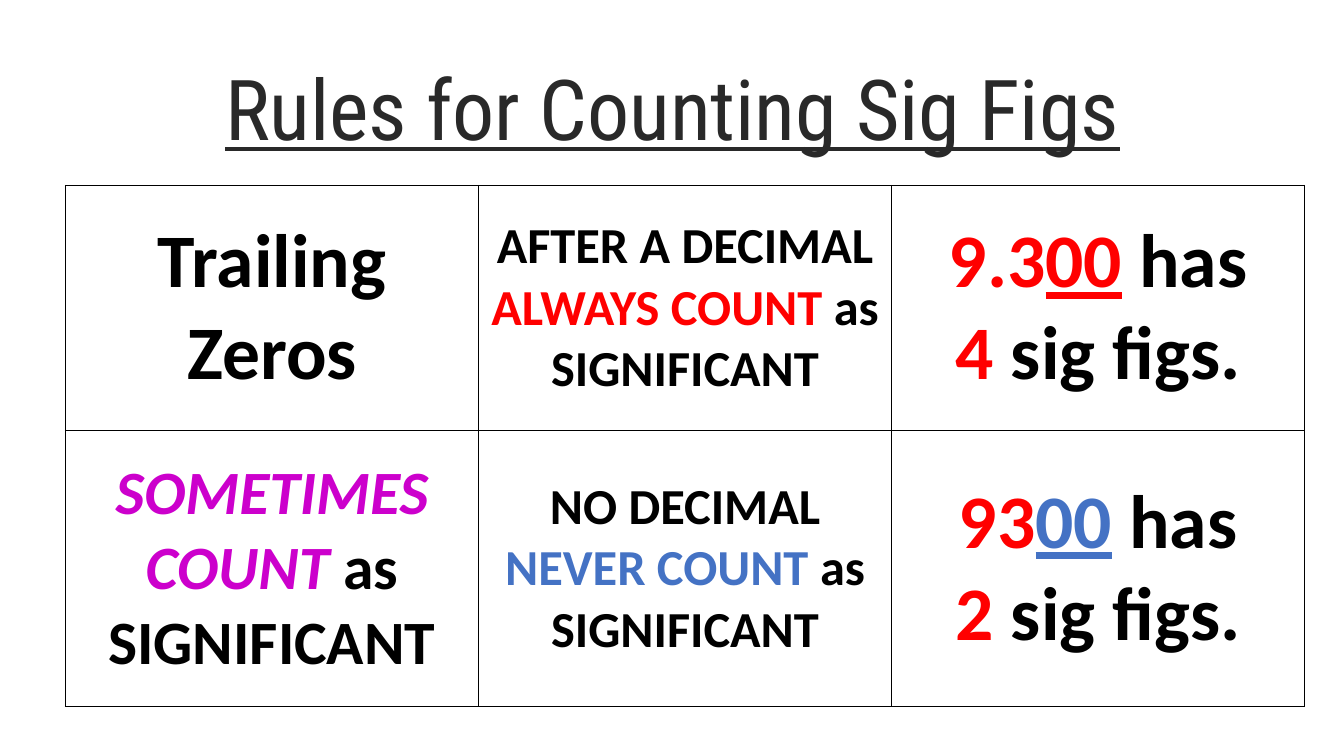
from dataclasses import dataclass

from lxml.etree import SubElement
from pptx import Presentation
from pptx.dml.color import RGBColor
from pptx.enum.text import MSO_ANCHOR as Anchor, PP_ALIGN as Align
from pptx.oxml.ns import qn
from pptx.util import Inches, Pt

WIDTH, HEIGHT = Inches(13.33), Inches(7.5)
COLORS = {
    "title": "292929",
    "black": "000000",
    "red": "FF0000",
    "blue": "4472C4",
    "purple": "CC00CC",
}


@dataclass(frozen=True)
class Piece:
    text: str
    color: str = "black"
    underline: bool = False
    italic: bool = False
    break_after: bool = False


@dataclass(frozen=True)
class Entry:
    size: int
    lines: tuple[tuple[Piece, ...], ...]


@dataclass(frozen=True)
class Area:
    left: float
    top: float
    width: float
    height: float

    def box(self) -> tuple[int, int, int, int]:
        return (
            round(self.left * WIDTH / 100),
            round(self.top * HEIGHT / 100),
            round(self.width * WIDTH / 100),
            round(self.height * HEIGHT / 100),
        )


def rule(condition: str, verdict: str, color: str) -> Entry:
    return Entry(36, ((Piece(condition, break_after=True),
                       Piece(f"{verdict} COUNT ", color),
                       Piece("as SIGNIFICANT")),))


def example(digits: str, zeros_color: str, count: str) -> Entry:
    return Entry(54, (
        (Piece(digits, "red"), Piece("00", zeros_color, underline=True), Piece(" has")),
        (Piece(f"{count} ", "red"), Piece("sig figs.")),
    ))


TITLE_AREA = Area(6.9, 5.33, 86.27, 19.33)
TABLE_AREA = Area(4.88, 24.53, 92.2, 68.93)
ROW_SHARES = (0.47, 0.53)
TITLE = Entry(60, ((Piece("Rules for Counting Sig Figs", "title", underline=True),),))
RULES = (
    (
        Entry(54, ((Piece("Trailing Zeros"),),)),
        rule("AFTER A DECIMAL", "ALWAYS", "red"),
        example("9.3", "red", "4"),
    ),
    (
        Entry(44, ((Piece("SOMETIMES COUNT ", "purple", italic=True),
                    Piece("as SIGNIFICANT")),)),
        rule("NO DECIMAL", "NEVER", "blue"),
        example("93", "blue", "2"),
    ),
)


def write(text_frame, entry: Entry, font_name: str, bold: bool, spacing: float) -> None:
    text_frame.word_wrap = True
    for index, line in enumerate(entry.lines):
        paragraph = text_frame.add_paragraph() if index else text_frame.paragraphs[0]
        paragraph.alignment = Align.CENTER
        paragraph.line_spacing = spacing
        for piece in line:
            run = paragraph.add_run()
            run.text = piece.text
            formats = {
                "name": font_name,
                "size": Pt(entry.size),
                "bold": bold,
                "italic": piece.italic,
                "underline": piece.underline,
            }
            for attribute, value in formats.items():
                setattr(run.font, attribute, value)
            run.font.color.rgb = RGBColor.from_string(COLORS[piece.color])
            if piece.break_after:
                paragraph.add_line_break()


def add_borders(cell) -> None:
    properties = cell._tc.get_or_add_tcPr()
    for position, side in enumerate(("a:lnL", "a:lnR", "a:lnT", "a:lnB")):
        line = properties.makeelement(qn(side), {"w": str(Pt(1))})
        fill = SubElement(line, qn("a:solidFill"))
        SubElement(fill, qn("a:srgbClr"), val=COLORS["black"])
        properties.insert(position, line)


def add_title(slide) -> None:
    text_frame = slide.shapes.add_textbox(*TITLE_AREA.box()).text_frame
    text_frame.vertical_anchor = Anchor.MIDDLE
    write(text_frame, TITLE, "Roboto Condensed", False, 0.9)


def add_rules(slide) -> None:
    box = TABLE_AREA.box()
    table = slide.shapes.add_table(len(RULES), len(RULES[0]), *box).table
    table.first_row = table.horz_banding = False
    for row, share, entries in zip(table.rows, ROW_SHARES, RULES):
        row.height = round(box[3] * share)
        for cell, entry in zip(row.cells, entries):
            cell.vertical_anchor = Anchor.MIDDLE
            cell.fill.background()
            add_borders(cell)
            write(cell.text_frame, entry, "Calibri", True, 1.0)


def main() -> None:
    presentation = Presentation()
    presentation.slide_width, presentation.slide_height = WIDTH, HEIGHT
    slide = presentation.slides.add_slide(presentation.slide_layouts[6])
    add_title(slide)
    add_rules(slide)
    presentation.save("out.pptx")


if __name__ == "__main__":
    main()
